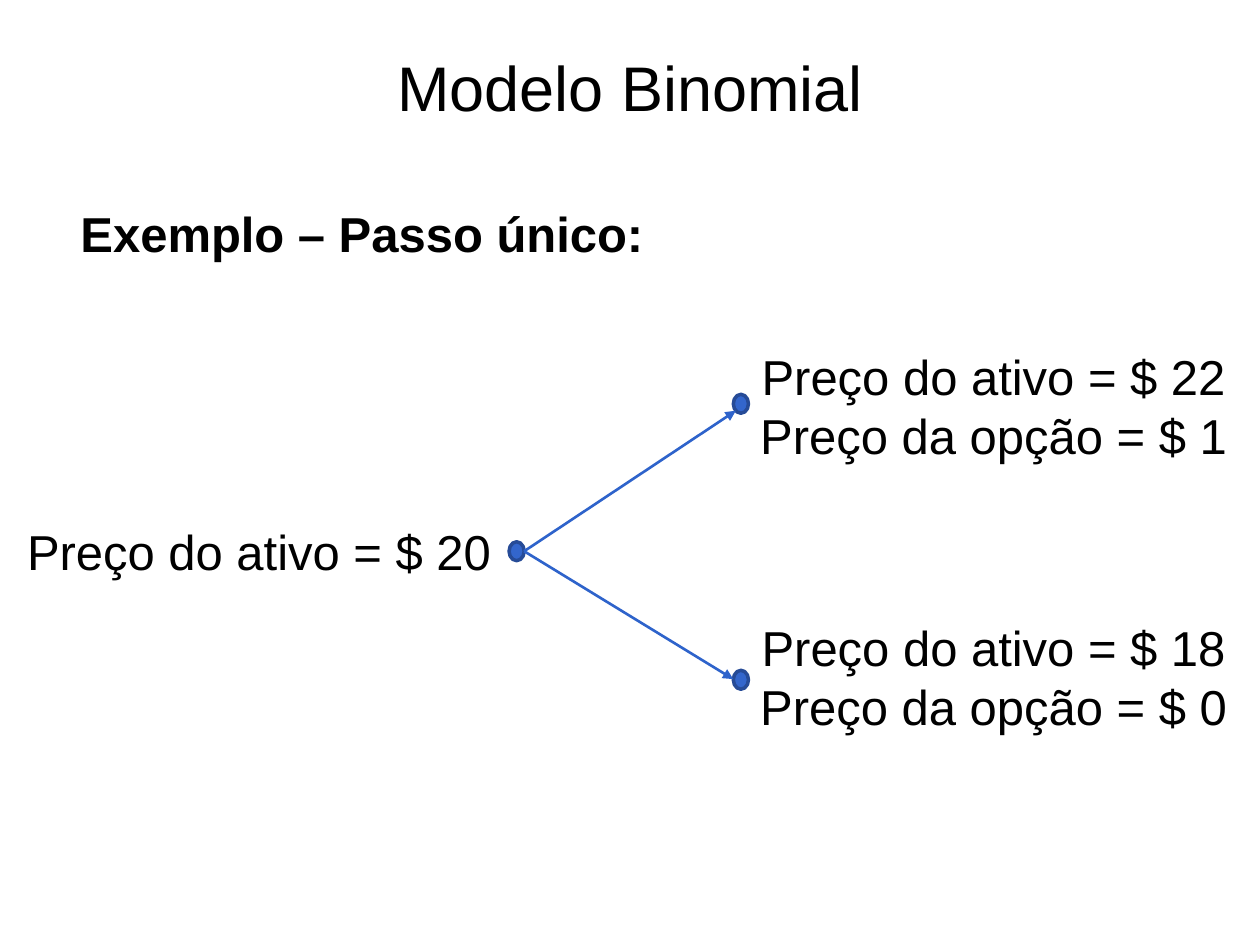
from lxml import etree
from pptx import Presentation
from pptx.dml.color import RGBColor
from pptx.enum import shapes, text
from pptx.oxml import ns
from pptx.util import Pt

BLACK, NODE_FILL, NODE_LINE, BRANCH = "000000", "3366CC", "264B97", "2E63CB"
NODE_W, NODE_H = 8.64, 10.8
LABEL_W = 288.72


def rgb(value):
    return RGBColor.from_string(value)


def add_text(slide, lines, left, top, width, height, size=28, bold=False,
             align=text.PP_ALIGN.CENTER, anchor=text.MSO_ANCHOR.TOP, spacing=None):
    """Add a text box with one paragraph per line."""
    sp = slide.shapes.add_textbox(Pt(left), Pt(top), Pt(width), Pt(height))
    tf = sp.text_frame
    tf.word_wrap = True
    tf.vertical_anchor = anchor
    for i, line in enumerate(lines):
        p = tf.paragraphs[0] if i == 0 else tf.add_paragraph()
        p.alignment = align
        p.line_spacing = spacing
        r = p.add_run()
        r.text = line
        r.font.name = "Arial"
        r.font.size = Pt(size)
        r.font.bold = bold
        r.font.color.rgb = rgb(BLACK)


def add_node(slide, left, top):
    sp = slide.shapes.add_shape(shapes.MSO_SHAPE.OVAL, Pt(left), Pt(top),
                                Pt(NODE_W), Pt(NODE_H))
    sp.shadow.inherit = False
    sp.fill.solid()
    sp.fill.fore_color.rgb = rgb(NODE_FILL)
    sp.line.color.rgb = rgb(NODE_LINE)
    sp.line.width = Pt(2)


def add_arrow(slide, start, end):
    cxn = slide.shapes.add_connector(shapes.MSO_CONNECTOR.STRAIGHT,
                                     *map(Pt, start + end))
    cxn.line.color.rgb = rgb(BRANCH)
    cxn.line.width = Pt(1.5)
    etree.SubElement(cxn.line._get_or_add_ln(), ns.qn("a:tailEnd"), type="triangle")
    etree.SubElement(cxn._element.spPr, ns.qn("a:effectLst"))


def main():
    prs = Presentation()
    prs.slide_width, prs.slide_height = Pt(720), Pt(540)
    slide = prs.slides.add_slide(prs.slide_layouts[6])

    add_text(slide, ["Modelo Binomial"], 36, 21.6, 648, 55.44, size=36,
             anchor=text.MSO_ANCHOR.MIDDLE)
    add_text(slide, ["Exemplo – Passo único:"], 38.88, 99.36, 519.12, 59.76,
             bold=True, align=text.PP_ALIGN.LEFT, spacing=1.4)

    add_text(slide, ["Preço do ativo = $ 20"], 3.6, 294.48, LABEL_W, 41.04)
    root_left, root_top = 290.88, 309.6
    add_node(slide, root_left, root_top)
    root_exit = (root_left + NODE_W, root_top + NODE_H / 2)

    # asset price, option price, label top, node top, arrow tip
    outcomes = [(22, 1, 194.4, 225.36, (420.48, 234.72)),
                (18, 0, 349.2, 383.04, (419.04, 388.08))]
    for asset, option, label_top, node_top, tip in outcomes:
        add_text(slide, [f"Preço do ativo = $ {asset}", f"Preço da opção = $ {option}"],
                 423.36, label_top, LABEL_W, 74.88)
        add_node(slide, 419.04, node_top)
        add_arrow(slide, root_exit, tip)

    prs.save("out.pptx")


if __name__ == "__main__":
    main()
